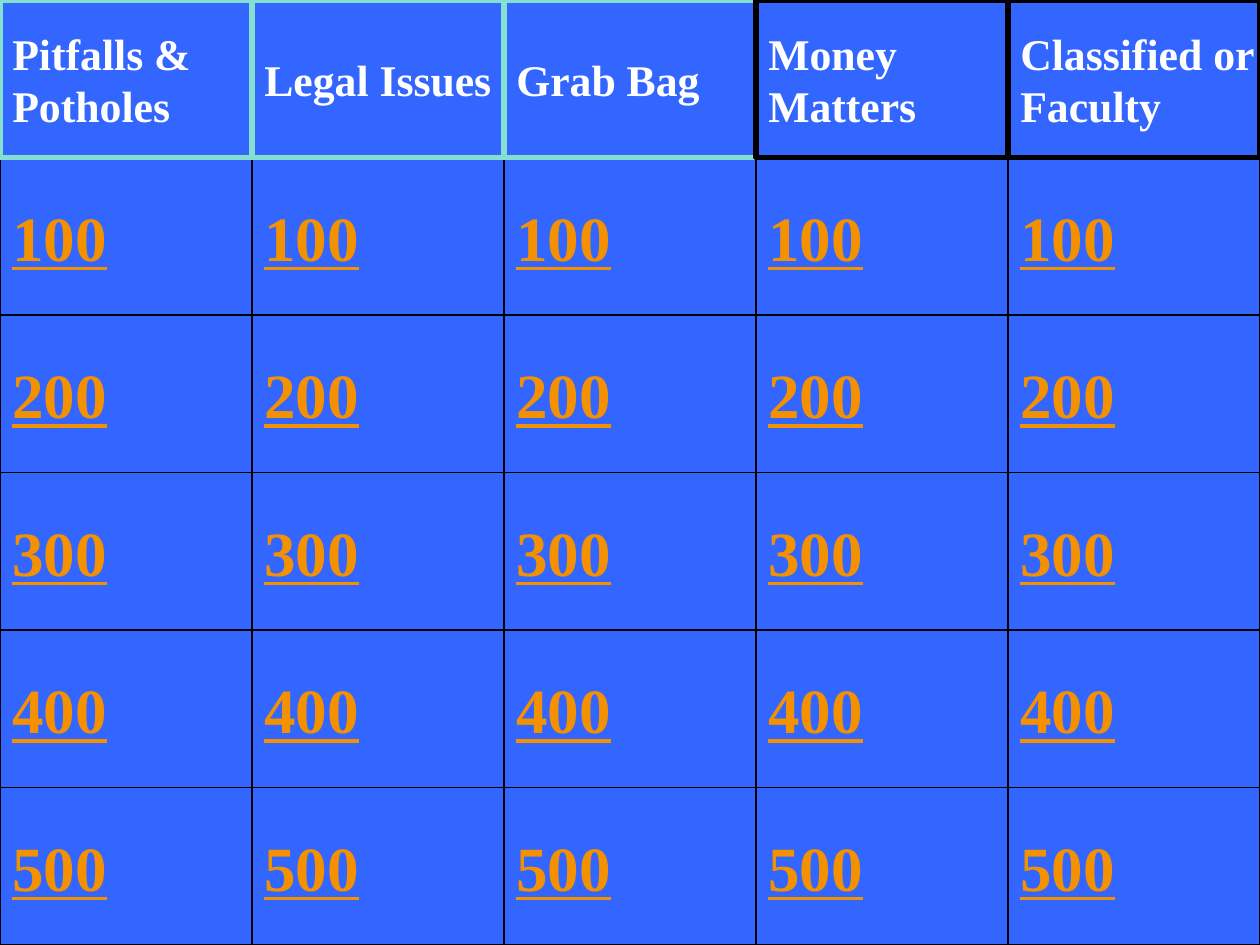
from pptx import Presentation
from pptx.dml.color import RGBColor
from pptx.enum import shapes, text
from pptx.util import Inches, Pt

BLUE, ORANGE, WHITE = "3366FF", "F49100", "FFFFFF"
MINT, BLACK = "85DFD0", "000000"
CATEGORIES = [
    (["Pitfalls &", "Potholes"], MINT),
    (["Legal Issues"], MINT),
    (["Grab Bag"], MINT),
    (["Money", "Matters"], BLACK),
    (["Classified or", "Faculty"], BLACK),
]
POINTS = [100, 200, 300, 400, 500]


def color(hex_code):
    return RGBColor.from_string(hex_code)


def write(tile, lines, size, ink, bold=True, underline=False):
    frame = tile.text_frame
    frame.word_wrap = False
    frame.vertical_anchor = text.MSO_ANCHOR.MIDDLE
    for i, line in enumerate(lines):
        paragraph = frame.paragraphs[0] if i == 0 else frame.add_paragraph()
        paragraph.alignment = text.PP_ALIGN.LEFT
        run = paragraph.add_run()
        run.text = line
        font = run.font
        font.name, font.size = "Times New Roman", Pt(size)
        font.bold, font.underline = bold, underline
        font.color.rgb = color(ink)


def add_tile(slide, kind, box, border, weight):
    tile = slide.shapes.add_shape(kind, *map(Inches, box))
    tile.shadow.inherit = False
    tile.fill.solid()
    tile.fill.fore_color.rgb = color(BLUE)
    tile.line.color.rgb = color(border)
    tile.line.width = Pt(weight)
    return tile


def add_points(slide, left, top, width, height):
    """Grid of point buttons, one column per category."""
    column, row = width / len(CATEGORIES), height / len(POINTS)
    for c in range(len(CATEGORIES)):
        for r, points in enumerate(POINTS):
            box = (left + c * column, top + r * row, column, row)
            button = add_tile(slide, shapes.MSO_SHAPE.ACTION_BUTTON_CUSTOM,
                              box, BLACK, 0.75)
            write(button, [str(points)], 36, ORANGE, underline=True)


def add_categories(slide, left, top, width, height):
    """Row of category headings."""
    column = width / len(CATEGORIES)
    for c, (lines, border) in enumerate(CATEGORIES):
        box = (left + c * column, top, column, height)
        heading = add_tile(slide, shapes.MSO_SHAPE.RECTANGLE, box, border, 3)
        write(heading, lines, 25, WHITE)


def main():
    deck = Presentation()
    deck.slide_width, deck.slide_height = Inches(10), Inches(7.5)
    board = deck.slides.add_slide(deck.slide_layouts[6])

    # The headings lie over the top edge of the buttons
    add_points(board, 0, 1.25, 10, 6.25)
    add_categories(board, 0, 0, 10, 1.25)
    deck.save("out.pptx")


if __name__ == "__main__":
    main()
